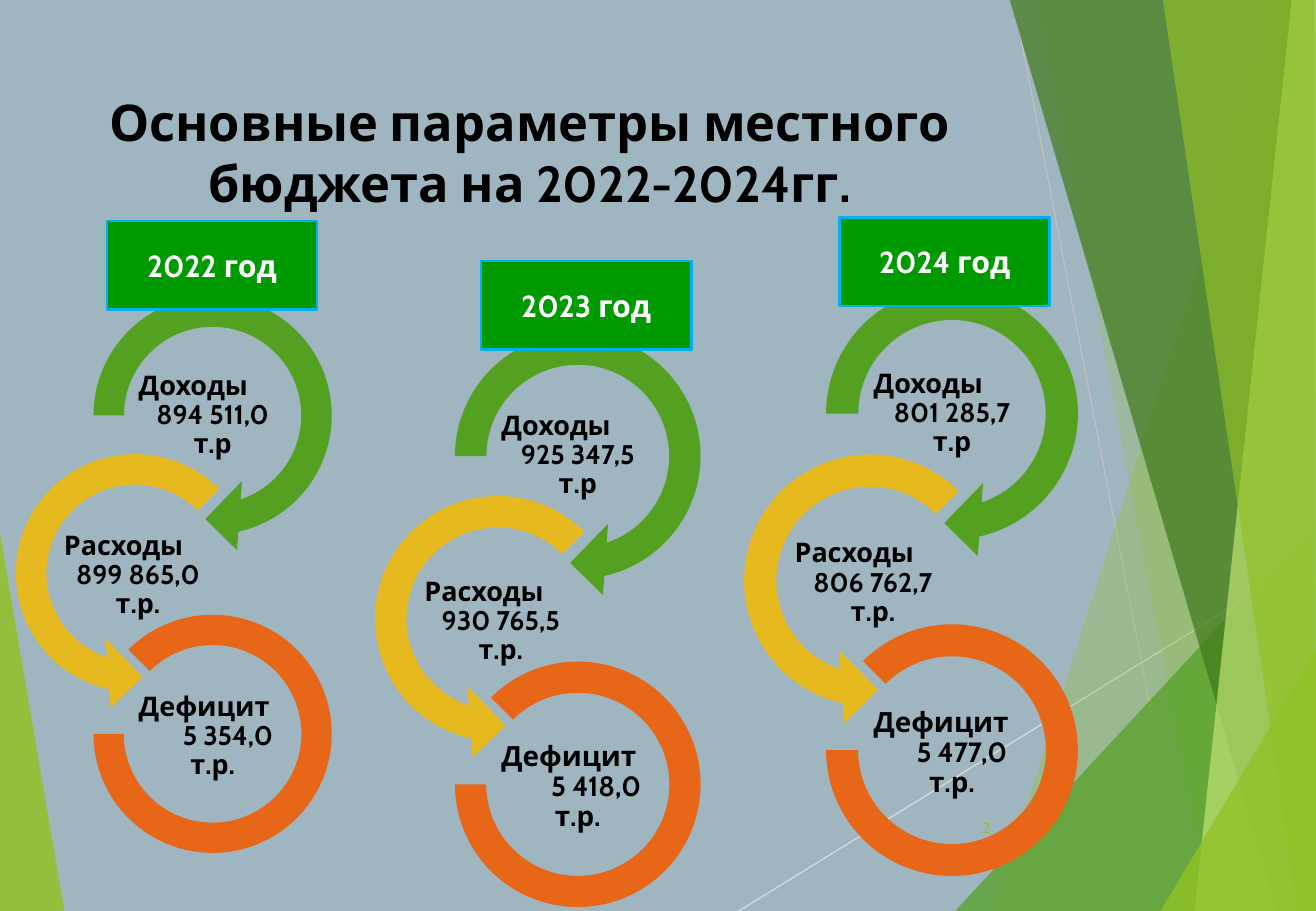
from lxml.etree import SubElement
from pptx import Presentation
from pptx.dml.color import RGBColor
from pptx.enum.shapes import MSO_CONNECTOR, MSO_SHAPE
from pptx.enum.text import MSO_ANCHOR, MSO_AUTO_SIZE, PP_ALIGN
from pptx.oxml.ns import qn
from pptx.util import Inches, Pt

COLUMNS, ROWS = 1083, 750
LIME, GREEN, YELLOW, ORANGE = "90C226", "54A021", "E6B91E", "E76618"

# Facets on the right and left edges: colour, opacity in percent, corners
FACETS_BACK = [(LIME, 85, [(0, 439), (53, 750), (0, 750)])]
FACETS_FRONT = [
    (LIME, 30, [(1056, 0), (817, 750), (1083, 750), (1083, 0)]),
    (LIME, 20, [(854, 0), (996, 750), (1083, 750), (1083, 0)]),
    (GREEN, 72, [(786, 750), (1083, 429), (1083, 750)]),
    ("3F7819", 70, [(831, 0), (1051, 750), (1083, 750), (1083, 0)]),
    ("C0E474", 70, [(1063, 0), (983, 750), (1083, 750), (1083, 0)]),
    (LIME, 65, [(957, 0), (1068, 750), (1083, 750), (1082, 0)]),
    (LIME, 80, [(955, 750), (1083, 535), (1083, 750)]),
]

# Cycle steps, all in shares of the cycle size:
# name, preset, adjustments, colour, arrow offset, arrow size, text offset
STEPS = [
    ("Доходы", MSO_SHAPE.CIRCULAR_ARROW, (0.11, 11.423, 45, 108, 0.125),
     GREEN, (0, 0), 1, (0.22, 0.36)),
    ("Расходы", MSO_SHAPE.LEFT_CIRCULAR_ARROW, (0.11, 11.423, 63, 189, 0.125),
     YELLOW, (-0.28, 0.57), 1, (-0.05, 0.94)),
    ("Дефицит", MSO_SHAPE.BLOCK_ARC, (135, 108, 0.127),
     ORANGE, (0.07, 1.22), 0.86, (0.22, 1.52)),
]

# Years: label, label corner, cycle corner, cycle size, values, deficit size, deficit indent
YEARS = [
    ("2022 год", (88, 182), (61, 228), 228, ("894 511,0", "899 865,0", "5 354,0"), 16, 0.25),
    ("2023 год", (396, 215), (358, 258), 235, ("925 347,5", "930 765,5", "5 418,0"), 16.5, 0.3),
    ("2024 год", (691, 179), (663, 220), 241, ("801 285,7", "806 762,7", "5 477,0"), 16.5, 0.16),
]


def color(value):
    return RGBColor.from_string(value)


class Page:
    """Holds the style and the slide being drawn."""

    font_name = "Cabin"

    def __init__(self, deck, background):
        self.column = deck.slide_width / COLUMNS
        self.row = deck.slide_height / ROWS
        self.slide = deck.slides.add_slide(deck.slide_layouts[5])
        self.slide.background.fill.solid()
        self.slide.background.fill.fore_color.rgb = color(background)

    def place(self, *lengths):
        return [round(length * (self.row if index % 2 else self.column))
                for index, length in enumerate(lengths)]

    def paint(self, shape, fill, line=None, opacity=100):
        shape.shadow.inherit = False
        shape.fill.solid()
        shape.fill.fore_color.rgb = color(fill)
        if opacity < 100:
            tint = shape.element.spPr.find(qn("a:solidFill"))[0]
            SubElement(tint, qn("a:alpha"), val=str(opacity * 1000))
        if line:
            shape.line.color.rgb = color(line)
            shape.line.width = Pt(1.5)
        else:
            shape.line.fill.background()

    def fill_text(self, shape, lines, size, ink, bold=True, anchor=MSO_ANCHOR.MIDDLE,
                  inset=None, spacing=None):
        """Each line is (text, alignment, left indent in inches)."""
        frame = shape.text_frame
        settings = {"word_wrap": True, "auto_size": MSO_AUTO_SIZE.NONE,
                    "vertical_anchor": anchor}
        if inset is not None:
            settings.update({f"margin_{side}": Inches(inset)
                             for side in ("left", "top", "right", "bottom")})
        for name, value in settings.items():
            setattr(frame, name, value)
        for index, (text, alignment, indent) in enumerate(lines):
            para = frame.add_paragraph() if index else frame.paragraphs[0]
            para.alignment = alignment
            if spacing:
                para.line_spacing = spacing
            if indent:
                properties = para._p.get_or_add_pPr()
                properties.set("marL", str(Inches(indent)))
                properties.set("indent", "0")
            span = para.add_run()
            span.text = text
            for name, value in {"name": self.font_name, "size": Pt(size), "bold": bold}.items():
                setattr(span.font, name, value)
            span.font.color.rgb = color(ink)

    def facet(self, fill, opacity, corners):
        points = [tuple(self.place(*corner)) for corner in corners]
        builder = self.slide.shapes.build_freeform(*points[0], scale=1.0)
        builder.add_line_segments(points[1:], close=True)
        self.paint(builder.convert_to_shape(), fill, opacity=opacity)

    def line(self, ends, ink):
        connector = self.slide.shapes.add_connector(MSO_CONNECTOR.STRAIGHT, *self.place(*ends))
        connector.line.color.rgb = color(ink)
        connector.line.width = Pt(0.75)
        SubElement(connector.element.spPr, qn("a:effectLst"))

    def title(self, text, area):
        title = self.slide.shapes.title
        for name, value in zip(("left", "top", "width", "height"), self.place(*area)):
            setattr(title, name, value)
        self.fill_text(title, [(text, PP_ALIGN.CENTER, 0)], 30, "000000",
                       anchor=MSO_ANCHOR.BOTTOM)
        tree = title.element.getparent()
        tree.append(title.element)  # bring in front of the facets

    def shape(self, preset, area, fill, line=None, adjustments=()):
        shape = self.slide.shapes.add_shape(preset, *self.place(*area))
        for index, value in enumerate(adjustments):
            shape.adjustments[index] = value
        self.paint(shape, fill, line)
        return shape

    def text(self, area, lines, size, ink, **options):
        box = self.slide.shapes.add_textbox(*self.place(*area))
        self.fill_text(box, lines, size, ink, **options)

    def cycle(self, corner, size, values, deficit_size, deficit_indent):
        left, top = corner
        for step, value in zip(STEPS, values):
            name, preset, adjustments, fill, offset, share, text_offset = step
            self.shape(preset, (left + offset[0] * size, top + offset[1] * size,
                                share * size, share * size), fill, adjustments=adjustments)
            is_deficit = name == "Дефицит"
            unit = "т.р" if name == "Доходы" else "т.р."
            lines = [(name, PP_ALIGN.LEFT, 0.02),
                     (value, PP_ALIGN.CENTER, deficit_indent if is_deficit else 0),
                     (unit, PP_ALIGN.CENTER, 0)]
            area = (left + text_offset[0] * size, top + text_offset[1] * size,
                    0.56 * size, 0.28 * size)
            self.text(area, lines, deficit_size if is_deficit else 16, "000000",
                      inset=0.01, spacing=0.9)


def main():
    deck = Presentation()
    deck.slide_width, deck.slide_height = Inches(10.83), Inches(7.5)
    page = Page(deck, "9FB6C0")

    # Background facets and thin rays
    for facet in FACETS_BACK:
        page.facet(*facet)
    page.line((608, 750, 1083, 457), "D9D9D9")
    page.line((834, 0, 979, 750), "BFBFBF")
    for facet in FACETS_FRONT:
        page.facet(*facet)

    # Title and page number
    page.title("Основные параметры местного бюджета на 2022-2024гг.", (9, 48, 854, 132))
    page.text((764, 661, 61, 40), [("2", PP_ALIGN.RIGHT, 0)], 9, LIME, bold=False)

    # Budget cycles, then the year labels over them
    for _, _, *cycle in YEARS:
        page.cycle(*cycle)
    for label, corner, *_ in YEARS:
        plate = page.shape(MSO_SHAPE.RECTANGLE, (*corner, 173, 73), "009900", "00B0F0")
        page.fill_text(plate, [(label, PP_ALIGN.CENTER, 0)], 18, "FFFFFF")

    deck.save("out.pptx")


if __name__ == "__main__":
    main()
